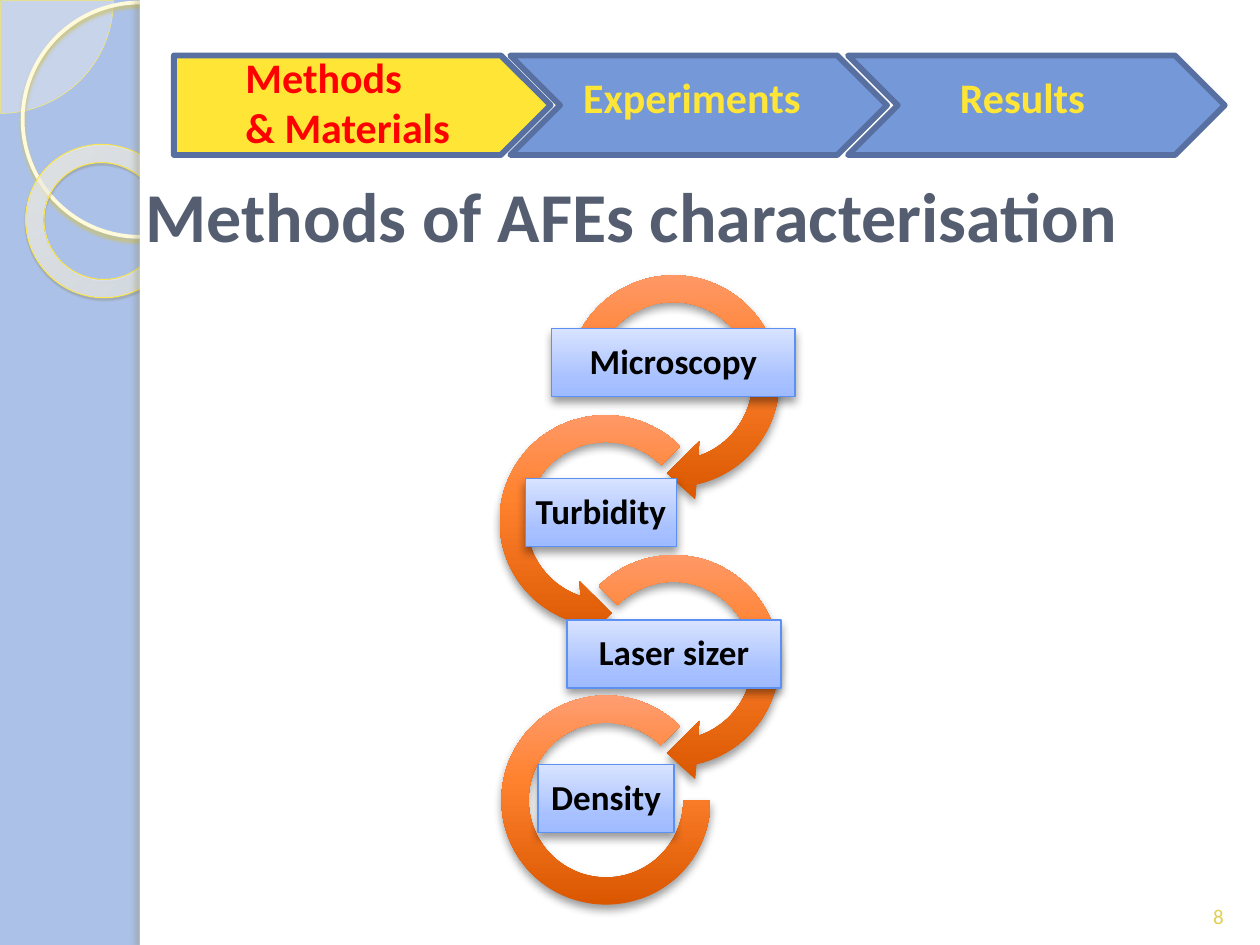
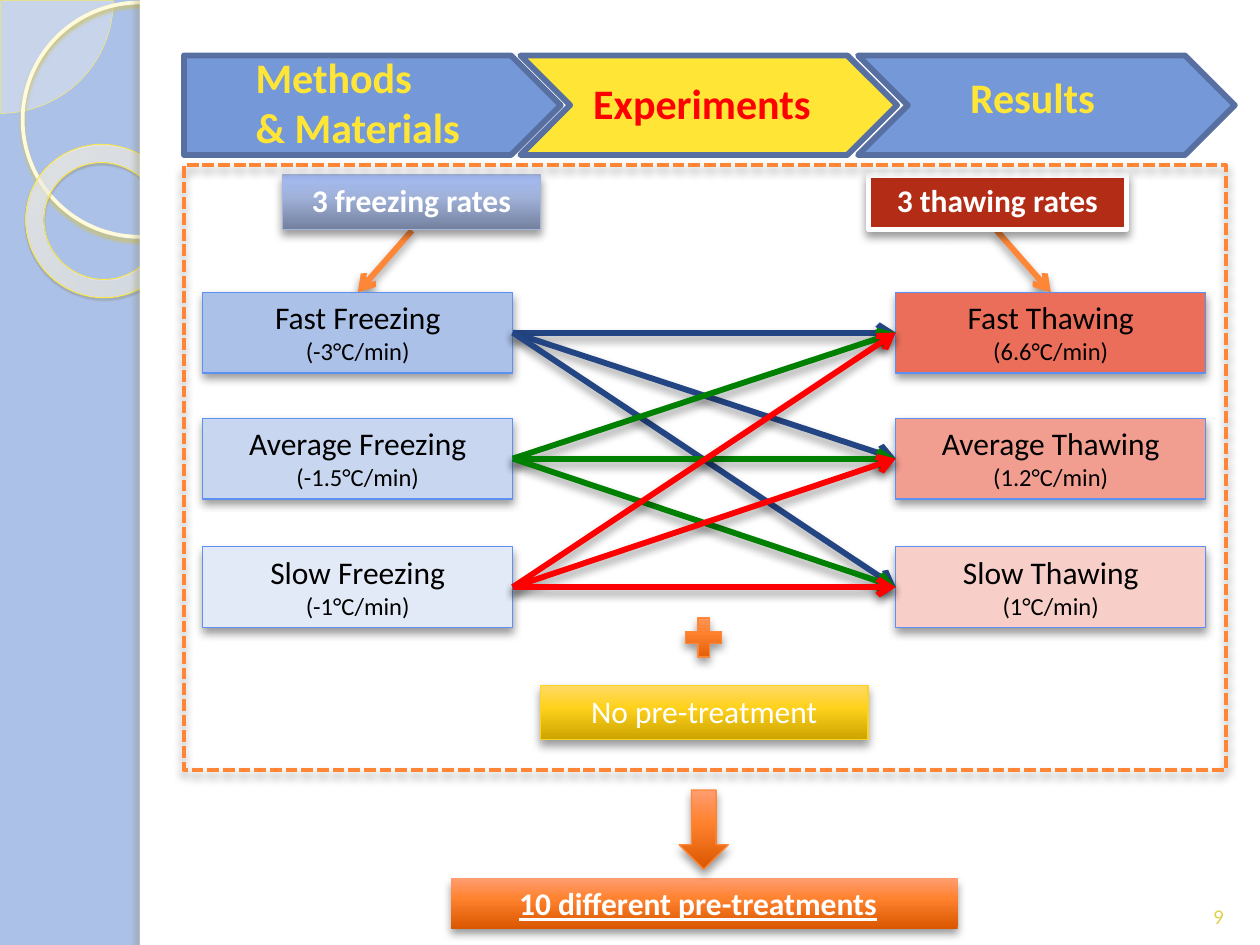
from lxml import etree
from pptx import Presentation
from pptx import util as u
from pptx.dml.color import RGBColor
from pptx.enum import dml, shapes, text
from pptx.oxml.ns import qn

PX = 9144  # one hundredth of an inch
FONT = "Calibri"
KIND = shapes.MSO_SHAPE
ALIGN = text.PP_ALIGN
ANCHOR = text.MSO_ANCHOR

C = {
    "page": "ACC1E8", "white": "FFFFFF", "black": "000000", "title": "545E70",
    "number": "E1CF50", "step": "7598D9", "step_line": "5770A1",
    "yellow": "FFE636", "red": "FF0000", "green": "008000", "navy": "244583",
    "orange": "FF8636", "arrow": "FE8637", "box_line": "5C90F2",
    "thaw": "B32C16", "freeze_line": "A4B6DF", "gold_line": "FFD323",
    "pie": "FFFDF1", "pie_line": "FFEC62", "ring": "FFFADA",
    "ring_shadow": "CFC162", "donut_line": "FBE64F",
    "donut_shadow": "706728", "edge_shadow": "817B4C",
}

# Gradient stops: position, colour, opacity (all in percent)
ORANGE = [(0, "DA5700", 100), (60, "FF822F", 100), (100, "FF9D71", 100)]
BLUE = [(0, "9EBBFF", 100), (25, "A7C0FF", 100), (100, "D8E3FF", 100)]
STEEL = [(0, "73819E", 100), (60, "A1B2DA", 100), (100, "A3BBF3", 100)]
GOLD = [(0, "CDA400", 100), (60, "FFD21D", 100), (100, "FFD966", 100)]
PALE = [(0, "FFFDF5", 70), (70, "FFFEFA", 55), (100, "FFED6D", 60)]

# Shadow: colour, opacity percent, blur pt, distance pt, direction degrees
SOFT = (C["black"], 40, 5.2, 3, 90)


def rgb(hex_value):
    return RGBColor.from_string(hex_value)


def sub(parent, tag, **attributes):
    values = {key: str(value) for key, value in attributes.items()}
    return etree.SubElement(parent, qn("a:" + tag), values)


def add_colour(parent, hex_value, opacity):
    colour = sub(parent, "srgbClr", val=hex_value)
    if opacity < 100:
        sub(colour, "alpha", val=opacity * 1000)


def set_gradient(sp, stops, centre=None):
    """Fill from bottom to top, or around a centre (l, t, r, b in percent)."""
    sp.fill.gradient()
    grad = sp.element.spPr.find(qn("a:gradFill"))
    grad.clear()
    grad.set("rotWithShape", "1")
    stop_list = sub(grad, "gsLst")
    for position, colour, opacity in stops:
        add_colour(sub(stop_list, "gs", pos=position * 1000), colour, opacity)
    if centre:
        sides = {side: v * 1000 for side, v in zip("ltrb", centre)}
        sub(sub(grad, "path", path="circle"), "fillToRect", **sides)
    else:
        sub(grad, "lin", ang=270 * 60000, scaled=0)


def cast_shadow(effects, shadow):
    colour, opacity, blur, distance, direction = shadow
    outer = sub(effects, "outerShdw", blurRad=u.Pt(blur), dist=u.Pt(distance),
                dir=direction * 60000, rotWithShape=0)
    add_colour(outer, colour, opacity)


def add_shape(parent, kind, box, fill=None, line=None, shadow=None, adjust=(),
              opacity=100):
    """Fill is a hex string, a list of gradient stops or None; line is (colour, pt)."""
    sp = parent.add_shape(kind, *[v * PX for v in box])
    for i, value in enumerate(adjust):
        sp.adjustments[i] = value
    if fill is None:
        sp.fill.background()
    elif isinstance(fill, list):
        set_gradient(sp, fill)
    else:
        sp.fill.solid()
        sp.fill.fore_color.rgb = rgb(fill)
        if opacity < 100:
            colour = sp.element.spPr.find(qn("a:solidFill"))[0]
            sub(colour, "alpha", val=opacity * 1000)
    if line:
        sp.line.color.rgb = rgb(line[0])
        sp.line.width = u.Pt(line[1])
    else:
        sp.line.fill.background()
    sp.shadow.inherit = False
    if shadow:
        cast_shadow(sp.element.spPr.find(qn("a:effectLst")), shadow)
    return sp


def write(sp, lines, colour, bold=False, align=ALIGN.CENTER, anchor=ANCHOR.TOP,
          underline=False):
    """Fill a shape with paragraphs given as (words, size in pt)."""
    tf = sp.text_frame
    tf.word_wrap = True
    tf.vertical_anchor = anchor
    for i, (words, size) in enumerate(lines):
        p = tf.add_paragraph() if i else tf.paragraphs[0]
        p.alignment = align
        r = p.add_run()
        r.text = words
        r.font.name = FONT
        r.font.size = u.Pt(size)
        r.font.bold = bold
        r.font.underline = underline
        r.font.color.rgb = rgb(colour)
    return tf


def add_text(parent, box, lines, colour, **style):
    sp = parent.add_textbox(*[v * PX for v in box])
    return write(sp, lines, colour, **style)


def add_arrow(parent, start, end, colour):
    cn = parent.add_connector(shapes.MSO_CONNECTOR.STRAIGHT,
                              *[v * PX for v in start + end])
    cn.line.color.rgb = rgb(colour)
    cn.line.width = u.Pt(3.35)
    sub(cn.element.spPr.find(qn("a:ln")), "tailEnd", type="arrow")
    cast_shadow(sub(cn.element.spPr, "effectLst"), SOFT)


def add_backdrop(s):
    s.background.fill.solid()
    s.background.fill.fore_color.rgb = rgb(C["page"])
    add_shape(s.shapes, KIND.PIE, (-89, -89, 179, 179), C["pie"],
              (C["pie_line"], 0.25), adjust=(0, 54), opacity=33)
    add_shape(s.shapes, KIND.OVAL, (18, 2, 186, 186), None, (C["ring"], 2.15),
              (C["ring_shadow"], 85, 2, 2, 90))
    donut = add_shape(s.shapes, KIND.DONUT, (20, 115, 123, 121), None,
                      (C["donut_line"], 0.58),
                      (C["donut_shadow"], 35, 1, 1.2, 75), (0.12,))
    set_gradient(donut, PALE, (-408, -50, 508, 150))
    donut.rotation = 38.6
    add_shape(s.shapes, KIND.RECTANGLE, (111, 0, 889, 750), C["white"])
    add_shape(s.shapes, KIND.RECTANGLE, (111, 0, 8, 750), C["white"],
              shadow=(C["edge_shadow"], 25, 3, 3, 180))


def add_number(s, number):
    add_text(s.shapes, (942, 690, 50, 52), [(str(number), 12)], C["number"],
             anchor=ANCHOR.BOTTOM)


def add_progress(s, left, current, middle_top=52):
    """Three-step banner with the current step highlighted."""
    group = s.shapes.add_group_shape().shapes
    for i in range(3):
        kind = KIND.CHEVRON if i else KIND.PENTAGON
        add_shape(group, kind, (left + i * 535 // 2, 44, 299, 79),
                  C["yellow"] if i == current else C["step"],
                  (C["step_line"], 3.35))
    labels = [
        ((47, 36, 346, 91), ["Methods", "& Materials"]),
        ((315, middle_top, 228, 50), ["Experiments"]),
        ((614, 52, 189, 50), ["Results"]),
    ]
    for i, ((x, y, w, h), lines) in enumerate(labels):
        add_text(group, (left + x, y, w, h), [(line, 24) for line in lines],
                 C["red"] if i == current else C["yellow"], bold=True,
                 align=ALIGN.LEFT)


def add_method(parent, name, box, ring, ring_box, adjust):
    add_shape(parent, ring, ring_box, ORANGE, shadow=SOFT, adjust=adjust)
    sp = add_shape(parent, KIND.RECTANGLE, box, BLUE, (C["box_line"], 0.75), SOFT)
    tf = write(sp, [(name, 20)], C["black"], bold=True, anchor=ANCHOR.MIDDLE)
    tf.margin_left = tf.margin_right = tf.margin_top = tf.margin_bottom = PX
    tf.paragraphs[0].line_spacing = 0.9


def add_label(s, box, words, fill, line=None, **style):
    sp = add_shape(s.shapes, KIND.RECTANGLE, box, fill, line, SOFT)
    return write(sp, [(words, 18)], C["white"], **style)


def build_methods(s):
    add_backdrop(s)
    add_text(s.shapes, (106, 115, 990, 110),
             [("Methods of AFEs characterisation", 40)], C["title"], bold=True,
             align=ALIGN.LEFT, anchor=ANCHOR.MIDDLE)
    chain = s.shapes.add_group_shape().shapes
    right, left = KIND.CIRCULAR_ARROW, KIND.LEFT_CIRCULAR_ARROW
    methods = [
        ("Microscopy", (438, 261, 193, 54), right, 438, (45, 108)),
        ("Turbidity", (417, 380, 120, 54), left, 384, (63, 189)),
        ("Laser sizer", (450, 492, 170, 54), right, 438, (45, 135)),
    ]
    for i, (name, box, ring, x, angles) in enumerate(methods):
        add_method(chain, name, box, ring, (x, 206 + i * 111, 193, 193),
                   (0.11, 11.42, *angles, 0.12))
    add_method(chain, "Density", (427, 607, 108, 54), KIND.BLOCK_ARC,
               (398, 552, 166, 166), (0, 189, 0.13))
    add_number(s, 8)
    add_progress(s, 138, 0)


def build_experiments(s):
    add_backdrop(s)
    add_number(s, 9)
    add_progress(s, 146, 1, middle_top=57)

    total = add_label(s, (358, 697, 402, 40), "10 different pre-treatments",
                      ORANGE, bold=True, underline=True, align=ALIGN.LEFT)
    total.margin_left = 54 * PX
    add_arrow(s.shapes, (327, 183), (284, 232), C["arrow"])
    add_arrow(s.shapes, (791, 183), (834, 232), C["arrow"])
    add_shape(s.shapes, KIND.DOWN_ARROW, (539, 627, 39, 63), ORANGE,
              (C["orange"], 0.75), SOFT)
    add_label(s, (689, 139, 205, 43), "3 thawing rates", C["thaw"],
              (C["white"], 3), bold=True)

    tops = (232, 332, 434)
    columns = [
        (161, "Freezing", [("-3", "ACC1E8"), ("-1.5", "C8D6F0"), ("-1", "E3EAF7")]),
        (711, "Thawing", [("6.6", "EB6E5A"), ("1.2", "F19E91"), ("1", "F8CFC8")]),
    ]
    for x, process, rates in columns:
        for y, speed, (rate, fill) in zip(tops, ("Fast", "Average", "Slow"), rates):
            sp = add_shape(s.shapes, KIND.RECTANGLE, (x, y, 246, 64), fill,
                           (C["box_line"], 0.75), SOFT)
            write(sp, [(f"{speed} {process}", 18), (f"({rate}°C/min)", 14)],
                  C["black"])
    for start, colour in zip(tops, ("navy", "green", "red")):
        for end in tops:
            add_arrow(s.shapes, (407, start + 32), (711, end + 32), C[colour])

    add_label(s, (224, 139, 205, 43), "3 freezing rates", STEEL,
              (C["freeze_line"], 0.75), bold=True)
    add_shape(s.shapes, KIND.MATH_PLUS, (539, 485, 39, 42), ORANGE,
              (C["orange"], 0.75), SOFT)
    add_label(s, (429, 544, 260, 43), "No pre-treatment", GOLD,
              (C["gold_line"], 0.75))
    frame = add_shape(s.shapes, KIND.RECTANGLE, (146, 131, 827, 480), None,
                      (C["orange"], 2.25), SOFT)
    frame.line.dash_style = dml.MSO_LINE.SQUARE_DOT


def main():
    prs = Presentation()
    prs.slide_width, prs.slide_height = 1000 * PX, 750 * PX
    for build in (build_methods, build_experiments):
        build(prs.slides.add_slide(prs.slide_layouts[6]))
    prs.save("out.pptx")


if __name__ == "__main__":
    main()
